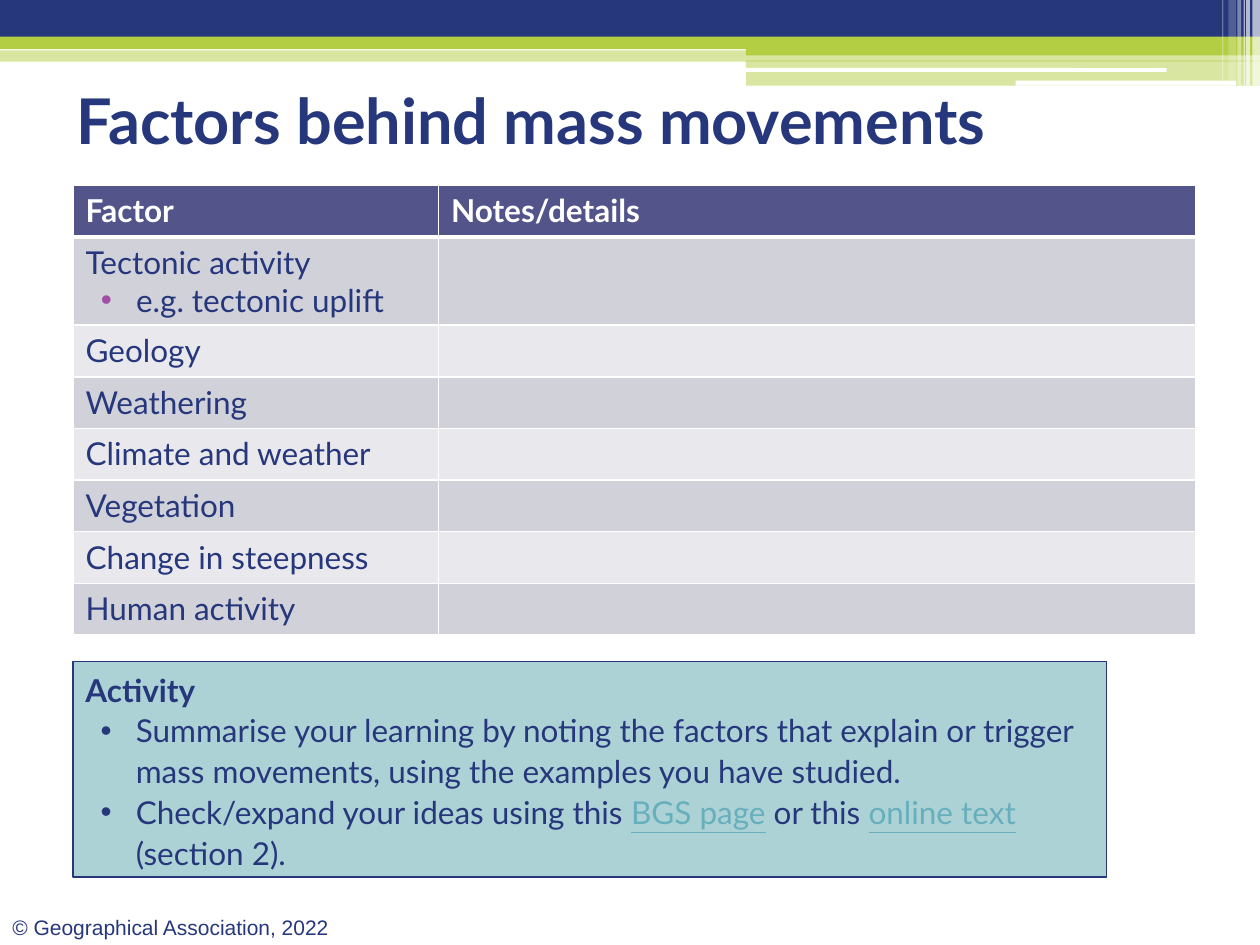
from lxml.etree import SubElement
from pptx import Presentation
from pptx.dml.color import RGBColor
from pptx.enum.shapes import MSO_SHAPE
from pptx.enum.text import MSO_ANCHOR, MSO_AUTO_SIZE, PP_ALIGN
from pptx.oxml.ns import qn
from pptx.util import Inches, Pt

NAVY, GREEN, WHITE = "26377C", "B4CE44", "FFFFFF"
TEAL, LINK, PURPLE = "ADD2D6", "67AFBD", "A04DA3"
HEADER, DARK, LIGHT = "53548A", "D1D1DA", "E9E9ED"

BANDS = [
    (0, 0.4, 10, 0.09, GREEN, 50),
    (0, 0, 10, 0.34, NAVY, 100),
    (0, 0.29, 10, 0.1, GREEN, 100),
    (5.92, 0.34, 4.08, 0.1, GREEN, 100),
    (5.92, 0.48, 4.08, 0.2, GREEN, 50),
]
GAPS = [(5.91, 0.54, 3.35, 0.03), (8.06, 0.64, 1.75, 0.04)]
STRIPES = [
    (9.94, 0.06, 0.68, 65),
    (9.89, 0.03, 0.68, 65),
    (9.87, 0.01, 0.68, 60),
    (9.82, 0.03, 0.68, 40),
    (9.75, 0.06, 0.64, 20),
    (9.7, 0.01, 0.64, 30),
]
FACTORS = ["Tectonic activity", "Geology", "Weathering", "Climate and weather",
           "Vegetation", "Change in steepness", "Human activity"]


def rgb(color):
    return RGBColor.from_string(color)


def add_run(p, text, size=18, color=NAVY, bold=False, font="Lato", underline=False):
    r = p.add_run()
    r.text = text
    r.font.name = font
    r.font.size = Pt(size)
    r.font.bold = bold
    r.font.color.rgb = rgb(color)
    if underline:
        r.font.underline = True


def set_bullet(p, color=NAVY):
    pPr = p._p.get_or_add_pPr()
    pPr.set("marL", str(Inches(0.4)))
    pPr.set("indent", str(Inches(-0.28)))
    SubElement(SubElement(pPr, qn("a:buClr")), qn("a:srgbClr"), val=color)
    SubElement(pPr, qn("a:buFont"), typeface="Arial")
    SubElement(pPr, qn("a:buChar"), char="•")


def add_block(s, x, y, w, h, color, alpha=100, kind=MSO_SHAPE.RECTANGLE):
    sp = s.shapes.add_shape(kind, Inches(x), Inches(y), Inches(w), Inches(h))
    sp.shadow.inherit = False
    sp.fill.solid()
    sp.fill.fore_color.rgb = rgb(color)
    sp.line.fill.background()
    if alpha < 100:
        clr = sp._element.spPr.find(qn("a:solidFill")).find(qn("a:srgbClr"))
        SubElement(clr, qn("a:alpha"), val=str(alpha * 1000))
    return sp


def add_banner(s):
    for band in BANDS:
        add_block(s, *band)
    for gap in GAPS:
        add_block(s, *gap, WHITE, kind=MSO_SHAPE.ROUNDED_RECTANGLE)
    for x, w, h, alpha in STRIPES:
        add_block(s, x, 0, w, h, WHITE, alpha)


def set_title(s, text):
    sp = s.shapes.title
    sp.left, sp.top, sp.width, sp.height = Inches(0.51), Inches(0.36), Inches(9), Inches(1.17)
    tf = sp.text_frame
    tf.vertical_anchor = MSO_ANCHOR.MIDDLE
    tf.auto_size = MSO_AUTO_SIZE.NONE
    p = tf.paragraphs[0]
    p.alignment = PP_ALIGN.LEFT
    add_run(p, text, 36, bold=True)


def add_footer(s, text):
    sp = s.shapes.add_textbox(Inches(0), Inches(7.21), Inches(2.87), Inches(0.3))
    tf = sp.text_frame
    tf.word_wrap = True
    add_run(tf.paragraphs[0], text, 12, font="Arial")


def style_cell(cell, color, bottom=1):
    tcPr = cell._tc.get_or_add_tcPr()
    for side, width in (("L", 1), ("R", 1), ("T", 1), ("B", bottom)):
        ln = SubElement(tcPr, qn("a:ln" + side), w=str(Pt(width)))
        SubElement(SubElement(ln, qn("a:solidFill")), qn("a:srgbClr"), val=WHITE)
    cell.fill.solid()
    cell.fill.fore_color.rgb = rgb(color)


def add_factor_table(s):
    rows = len(FACTORS) + 1
    table = s.shapes.add_table(rows, 2, Inches(0.58), Inches(1.47),
                               Inches(8.91), Inches(3.54)).table
    table.columns[0].width = Inches(2.9)
    table.columns[1].width = Inches(6.01)
    for row in table.rows:
        row.height = Inches(0.41)
    for cell, text in zip(table.rows[0].cells, ("Factor", "Notes/details")):
        style_cell(cell, HEADER, 3)
        add_run(cell.text_frame.paragraphs[0], text, color=WHITE, bold=True)
    for i, factor in enumerate(FACTORS, 1):
        for cell in table.rows[i].cells:
            style_cell(cell, DARK if i % 2 else LIGHT, 1)
        add_run(table.cell(i, 0).text_frame.paragraphs[0], factor)
    table.rows[1].height = Inches(0.69)
    p = table.cell(1, 0).text_frame.add_paragraph()
    set_bullet(p, PURPLE)
    add_run(p, "e.g. tectonic uplift")


def add_activity(s):
    sp = add_block(s, 0.58, 5.25, 8.2, 1.71, TEAL)
    sp.line.color.rgb = rgb(NAVY)
    sp.line.width = Pt(0.75)
    tf = sp.text_frame
    tf.word_wrap = True
    tf.vertical_anchor = MSO_ANCHOR.TOP
    add_run(tf.paragraphs[0], "Activity", bold=True)
    tasks = [
        ["Summarise your learning by noting the factors that explain or trigger "
         "mass movements, using the examples you have studied."],
        ["Check/expand your ideas using this ", "BGS page", " or this ",
         "online text", " (section 2)."],
    ]
    for parts in tasks:
        p = tf.add_paragraph()
        set_bullet(p)
        for i, text in enumerate(parts):
            link = i % 2 == 1
            add_run(p, text, color=LINK if link else NAVY, underline=link)
    for p in tf.paragraphs:
        p.alignment = PP_ALIGN.LEFT
        p.line_spacing = 1.08


def main():
    prs = Presentation()
    prs.slide_width, prs.slide_height = Inches(10), Inches(7.5)
    s = prs.slides.add_slide(prs.slide_layouts[5])
    add_banner(s)
    add_footer(s, "© Geographical Association, 2022")
    set_title(s, "Factors behind mass movements")
    add_factor_table(s)
    add_activity(s)
    prs.save("out.pptx")


if __name__ == "__main__":
    main()
